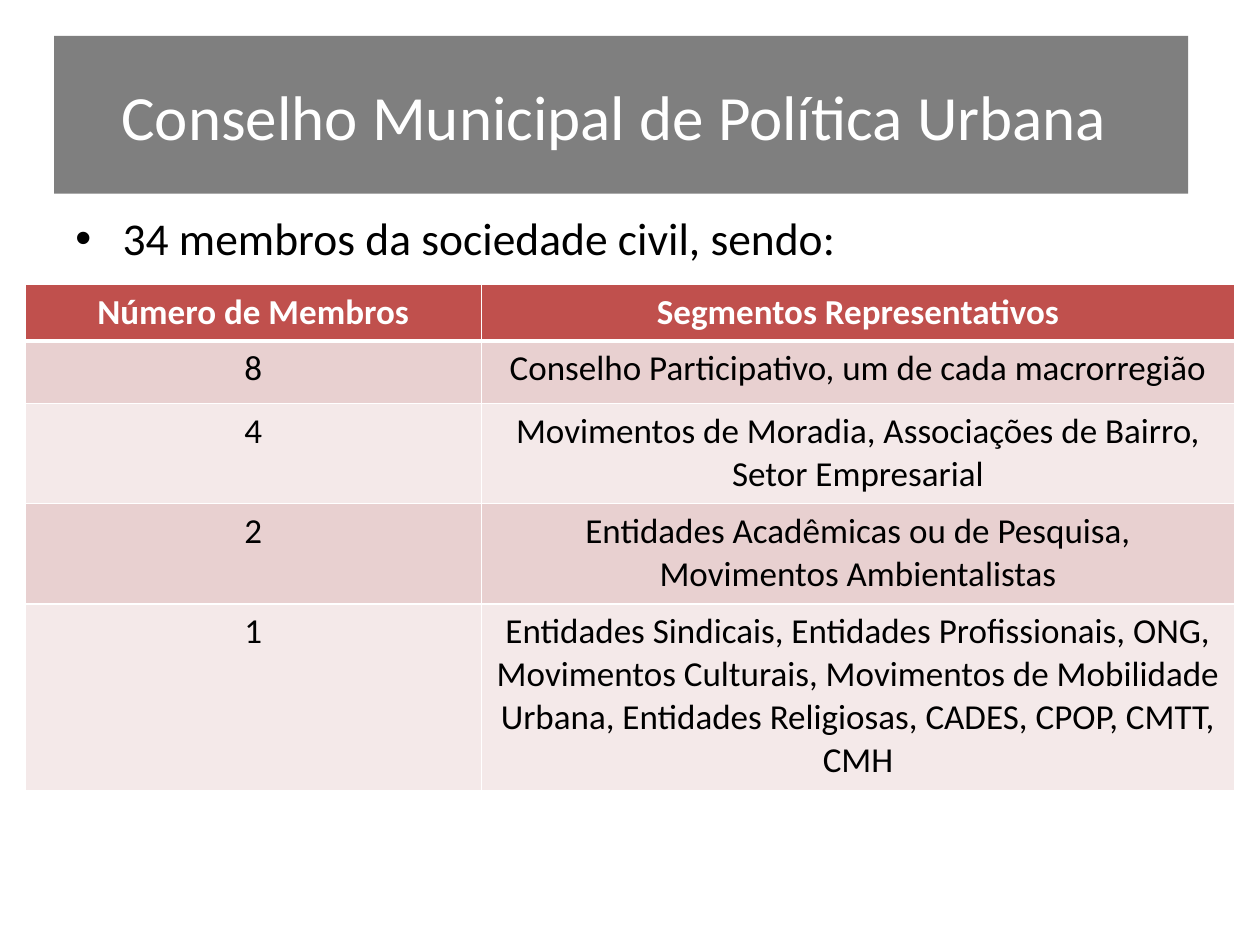
from dataclasses import dataclass

from lxml.etree import SubElement
from pptx import Presentation
from pptx.dml.color import RGBColor
from pptx.enum.shapes import MSO_SHAPE as Shape
from pptx.enum.text import MSO_ANCHOR as Anchor, PP_ALIGN as Align
from pptx.oxml.ns import qn
from pptx.util import Inches, Pt


@dataclass(frozen=True)
class Theme:
    font: str = "Calibri"
    white: str = "FFFFFF"
    black: str = "000000"
    banner: str = "7F7F7F"
    header: str = "C0504D"
    bands: tuple = ("E8D0D0", "F4E9E9")
    title_size: int = 36
    body_size: int = 26
    table_size: int = 20
    border: int = 1
    header_border: int = 3


class SlideBuilder:
    """Draws styled elements on a slide, with lengths in percent of its size."""

    def __init__(self, presentation, theme):
        self.theme = theme
        self.width = presentation.slide_width
        self.height = presentation.slide_height
        self.slide = presentation.slides.add_slide(presentation.slide_layouts[6])

    def across(self, percent):
        return round(self.width * percent / 100)

    def down(self, percent):
        return round(self.height * percent / 100)

    def box(self, left, top, width, height):
        return self.across(left), self.down(top), self.across(width), self.down(height)

    def paint(self, target, color):
        target.fill.solid()
        target.fill.fore_color.rgb = RGBColor.from_string(color)

    def set_text(self, frame, text, size, color, align=Align.CENTER, bold=False):
        frame.word_wrap = True
        paragraph = frame.paragraphs[0]
        paragraph.text = text
        paragraph.alignment = align
        font = paragraph.font
        font.name, font.size, font.bold = self.theme.font, Pt(size), bold
        font.color.rgb = RGBColor.from_string(color)

    def banner(self, text, *area):
        shape = self.slide.shapes.add_shape(Shape.RECTANGLE, *self.box(*area))
        shape.shadow.inherit = False
        self.paint(shape, self.theme.banner)
        shape.line.fill.background()
        shape.text_frame.vertical_anchor = Anchor.MIDDLE
        self.set_text(shape.text_frame, text, self.theme.title_size, self.theme.white)

    def bullet(self, text, indent, *area):
        frame = self.slide.shapes.add_textbox(*self.box(*area)).text_frame
        properties = frame.paragraphs[0]._p.get_or_add_pPr()
        properties.set("marL", str(self.across(indent)))
        properties.set("indent", str(-self.across(indent)))
        SubElement(properties, qn("a:buFont"), typeface="Arial")
        SubElement(properties, qn("a:buChar"), char="•")
        self.set_text(frame, text, self.theme.body_size, self.theme.black, Align.LEFT)

    def borders(self, cell, top, bottom):
        properties = cell._tc.get_or_add_tcPr()
        widths = {"L": self.theme.border, "R": self.theme.border, "T": top, "B": bottom}
        for side, width in widths.items():
            line = SubElement(properties, qn(f"a:ln{side}"), w=str(Pt(width)))
            SubElement(SubElement(line, qn("a:solidFill")), qn("a:srgbClr"), val=self.theme.white)

    def table(self, rows, left, top, columns, heights):
        theme = self.theme
        area = self.box(left, top, sum(columns), sum(heights))
        table = self.slide.shapes.add_table(len(rows), len(columns), *area).table
        for column, width in zip(table.columns, columns):
            column.width = self.across(width)
        for index, (row, height, texts) in enumerate(zip(table.rows, heights, rows)):
            row.height = self.down(height)
            is_header = index == 0
            color = theme.header if is_header else theme.bands[(index - 1) % 2]
            above = theme.header_border if index == 1 else theme.border
            below = theme.header_border if is_header else theme.border
            for cell, text in zip(row.cells, texts):
                self.borders(cell, above, below)
                self.paint(cell, color)
                self.set_text(cell.text_frame, text, theme.table_size,
                              theme.white if is_header else theme.black, bold=is_header)


MEMBERS = [
    ("Número de Membros", "Segmentos Representativos"),
    ("8", "Conselho Participativo, um de cada macrorregião"),
    ("4", "Movimentos de Moradia, Associações de Bairro, Setor Empresarial"),
    ("2", "Entidades Acadêmicas ou de Pesquisa, Movimentos Ambientalistas"),
    ("1", "Entidades Sindicais, Entidades Profissionais, ONG, Movimentos Culturais, "
          "Movimentos de Mobilidade Urbana, Entidades Religiosas, CADES, CPOP, CMTT, CMH"),
]


def main():
    presentation = Presentation()
    presentation.slide_width, presentation.slide_height = Inches(10), Inches(7.5)
    builder = SlideBuilder(presentation, Theme())
    builder.bullet("34 membros da sociedade civil, sendo:", 3.75, 5, 21.6, 90, 12.5)
    builder.table(MEMBERS, 2, 30.1, (36.2, 59.8), (6, 6.6, 10.6, 10.6, 19.8))
    builder.banner("Conselho Municipal de Política Urbana ", 4.3, 3.8, 90, 16.7)
    presentation.save("out.pptx")


if __name__ == "__main__":
    main()
